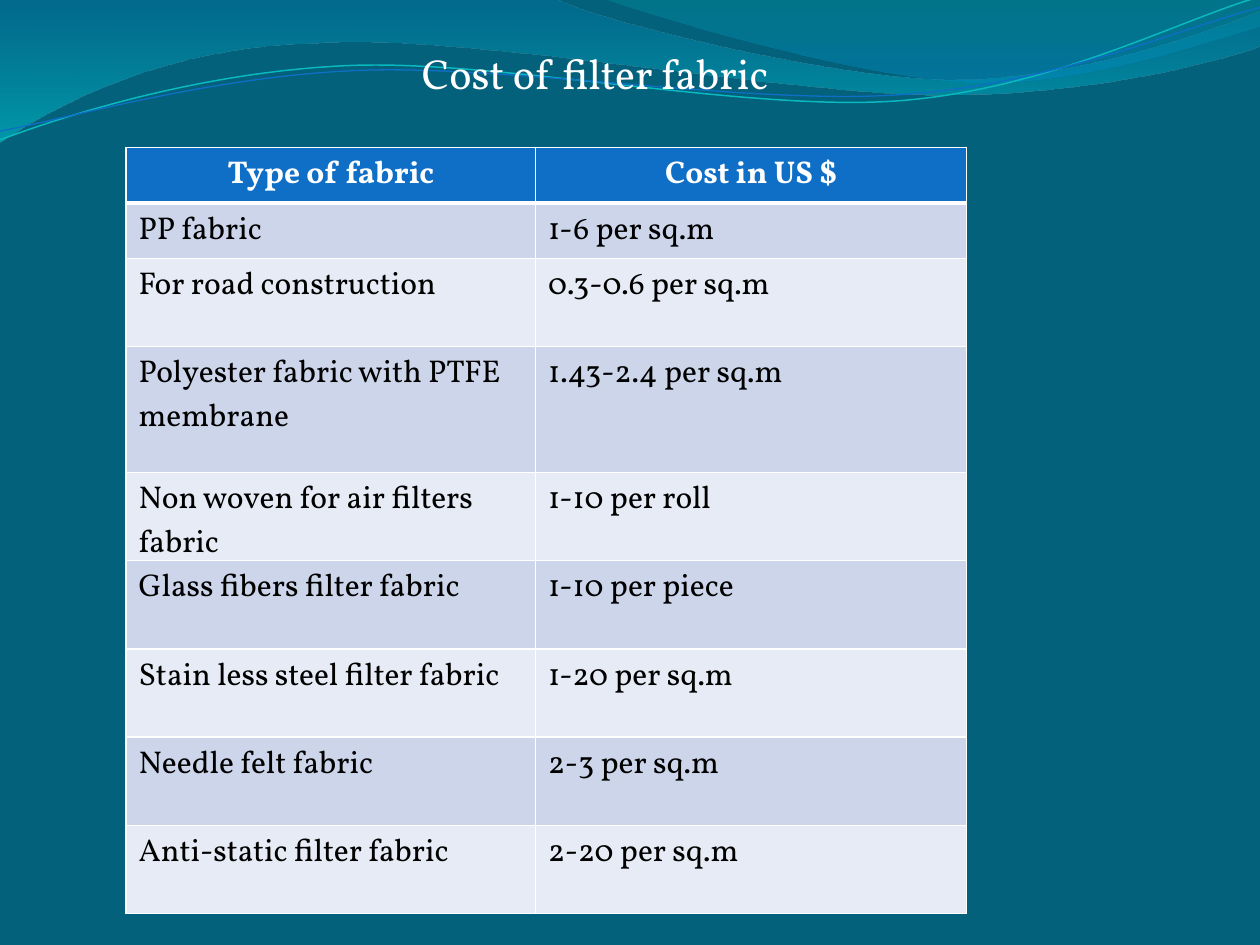
from dataclasses import dataclass
from math import cos, radians, sin
from typing import Optional

from lxml.etree import SubElement
from pptx import Presentation
from pptx.dml.color import RGBColor
from pptx.enum.text import MSO_AUTO_SIZE, PP_ALIGN
from pptx.oxml.ns import qn
from pptx.util import Inches, Pt

COLORS = {
    "background": "04617B", "white": "FFFFFF", "black": "000000",
    "header": "0F6FC6", "odd_row": "CCD5EA", "even_row": "E7EBF5",
    "deep_blue": "0074A1", "cyan": "00C6CF", "teal": "00A1A9",
    "sky": "008BBF", "turquoise": "0AB8BF", "royal": "0F6FC6",
}
FONT = "Vollkorn"
COLUMN_WIDTHS = (3.25, 3.42)
ROW_HEIGHTS = (0.44, 0.44, 0.7, 1, 0.7, 0.7, 0.7, 0.7, 0.7)
COSTS = (
    ("Type of fabric", "Cost in US $"),
    ("PP fabric", "1-6 per sq.m"),
    ("For road construction", "0.3-0.6 per sq.m"),
    ("Polyester fabric with PTFE membrane", "1.43-2.4 per sq.m"),
    ("Non woven for air filters fabric", "1-10 per roll"),
    ("Glass fibers filter fabric", "1-10 per piece"),
    ("Stain less steel filter fabric", "1-20 per sq.m"),
    ("Needle felt fabric", "2-3 per sq.m"),
    ("Anti-static filter fabric", "2-20 per sq.m"),
)


@dataclass
class GradientStop:
    position: float
    color: str
    opacity: int


@dataclass
class Wave:
    start: tuple
    segments: tuple
    stops: tuple = ()
    line_color: Optional[str] = None
    line_width: float = 0
    rotation: float = 0
    center: tuple = (0, 0)


WAVES = (
    Wave((0, 0), (
        (4.4, -0.01), (4.76, 0.17, 6.64, 0.63, 7.58, 0.63),
        (8.53, 0.63, 9.58, 0.26, 10, 0.09), (10.01, 0.36),
        (9.83, 0.44, 8.7, 0.76, 7.46, 0.75), (6.22, 0.75, 3.82, 0.28, 2.57, 0.34),
        (1.29, 0.36, 0.46, 0.83, -0.01, 1.13)),
        stops=(GradientStop(0, "deep_blue", 45), GradientStop(1, "cyan", 55))),
    Wave((4.79, -0.01), (
        (5.09, 0.11, 6.82, 0.62, 7.69, 0.65), (8.56, 0.69, 9.61, 0.32, 10, 0.21),
        (10, 0)),
        stops=(GradientStop(0, "teal", 30), GradientStop(0.8, "sky", 45))),
    Wave((0, 1.11), (
        (0.48, 0.93, 1.58, 0.57, 2.77, 0.52), (3.95, 0.47, 5.93, 0.89, 7.13, 0.8),
        (8.33, 0.71, 9.38, 0.15, 9.98, -0.02)),
        line_color="turquoise", line_width=0.85, rotation=-2.7, center=(4.99, 0.58)),
    Wave((0, 1.04), (
        (0.47, 0.96, 1.64, 0.61, 2.83, 0.56), (4.03, 0.51, 5.97, 0.84, 7.17, 0.75),
        (8.36, 0.67, 9.41, 0.21, 10, 0.06)),
        line_color="royal", line_width=0.75, rotation=-2.7, center=(5, 0.59)),
)


def rgb(name: str) -> RGBColor:
    """Return a named colour."""
    return RGBColor.from_string(COLORS[name])


def set_attributes(target, values: dict) -> None:
    """Set every attribute named in a dict of format values."""
    for name, value in values.items():
        setattr(target, name, value)


def write_text(text_frame, text: str, size: int, color: str,
               bold: bool = False, align=PP_ALIGN.LEFT) -> None:
    """Write one formatted paragraph."""
    paragraph = text_frame.paragraphs[0]
    paragraph.alignment = align
    run = paragraph.add_run()
    run.text = text
    set_attributes(run.font, {"name": FONT, "size": Pt(size), "bold": bold})
    run.font.color.rgb = rgb(color)


def unrotated_points(wave: Wave) -> list:
    """Return all points of a wave as lengths, before its rotation."""
    angle = radians(-wave.rotation)
    center_x, center_y = wave.center
    points = []
    for segment in (wave.start, *wave.segments):
        for x, y in zip(segment[::2], segment[1::2]):
            across, down = x - center_x, y - center_y
            points.append((
                Inches(center_x + across * cos(angle) - down * sin(angle)),
                Inches(center_y + across * sin(angle) + down * cos(angle))))
    return points


def bend_segments(shape, segments: tuple) -> None:
    """Join the points of each cubic segment into one curve."""
    lines = iter(list(shape._element.iter(qn("a:lnTo"))))
    for segment in segments:
        first, *others = [next(lines) for _ in range(len(segment) // 2)]
        if others:
            first.tag = qn("a:cubicBezTo")
        for line in others:
            first.append(line[0])
            line.getparent().remove(line)


def draw_wave(slide, wave: Wave) -> None:
    """Draw a gradient band or an open curved line."""
    start, *points = unrotated_points(wave)
    builder = slide.shapes.build_freeform(*start)
    builder.add_line_segments(points, close=bool(wave.stops))
    shape = builder.convert_to_shape()
    bend_segments(shape, wave.segments)
    shape.rotation = wave.rotation
    shape.shadow.inherit = False
    if not wave.stops:
        shape.fill.background()
        shape.line.color.rgb = rgb(wave.line_color)
        shape.line.width = Pt(wave.line_width)
        return
    shape.line.fill.background()
    shape.fill.gradient()
    shape.fill.gradient_angle = 270
    for gradient_stop, stop in zip(shape.fill.gradient_stops, wave.stops):
        gradient_stop.position = stop.position
        gradient_stop.color.rgb = rgb(stop.color)
    for color, stop in zip(shape._element.iter(qn("a:srgbClr")), wave.stops):
        SubElement(color, qn("a:alpha"), val=str(stop.opacity * 1000))


def add_borders(cell, widths: dict) -> None:
    """Give a cell white borders of the given widths in points."""
    properties = cell._tc.get_or_add_tcPr()
    for side, width in widths.items():
        border = SubElement(properties, qn(f"a:ln{side}"), w=str(Pt(width)))
        fill = SubElement(border, qn("a:solidFill"))
        SubElement(fill, qn("a:srgbClr"), val=COLORS["white"])


def draw_title(slide) -> None:
    """Add the slide title."""
    title = slide.shapes.add_textbox(Inches(3.25), Inches(0.33), Inches(3.75), Inches(0.5))
    set_attributes(title.text_frame,
                   {"word_wrap": True, "auto_size": MSO_AUTO_SIZE.SHAPE_TO_FIT_TEXT})
    write_text(title.text_frame, "Cost of filter fabric", 24, "white")


def draw_cost_table(slide) -> None:
    """Add the table of fabric costs."""
    table = slide.shapes.add_table(
        len(COSTS), len(COLUMN_WIDTHS), Inches(1), Inches(1.17),
        Inches(sum(COLUMN_WIDTHS)), Inches(sum(ROW_HEIGHTS))).table
    for column, width in zip(table.columns, COLUMN_WIDTHS):
        column.width = Inches(width)
    for row_index, (height, texts) in enumerate(zip(ROW_HEIGHTS, COSTS)):
        table.rows[row_index].height = Inches(height)
        is_header = row_index == 0
        fill = "header" if is_header else ("even_row", "odd_row")[row_index % 2]
        borders = {"L": 1, "R": 1, "T": 3 if row_index == 1 else 1, "B": 3 if is_header else 1}
        for column_index, text in enumerate(texts):
            cell = table.cell(row_index, column_index)
            set_attributes(cell, {"margin_top": Inches(0.05), "margin_bottom": 0})
            add_borders(cell, borders)
            cell.fill.solid()
            cell.fill.fore_color.rgb = rgb(fill)
            write_text(cell.text_frame, text, 18, "white" if is_header else "black",
                       is_header, PP_ALIGN.CENTER if is_header else PP_ALIGN.LEFT)


def main() -> None:
    """Build and save the slide."""
    presentation = Presentation()
    set_attributes(presentation, {"slide_width": Inches(10), "slide_height": Inches(7.5)})
    slide = presentation.slides.add_slide(presentation.slide_layouts[6])
    slide.background.fill.solid()
    slide.background.fill.fore_color.rgb = rgb("background")
    for wave in WAVES:
        draw_wave(slide, wave)
    draw_title(slide)
    draw_cost_table(slide)
    presentation.save("out.pptx")


if __name__ == "__main__":
    main()
